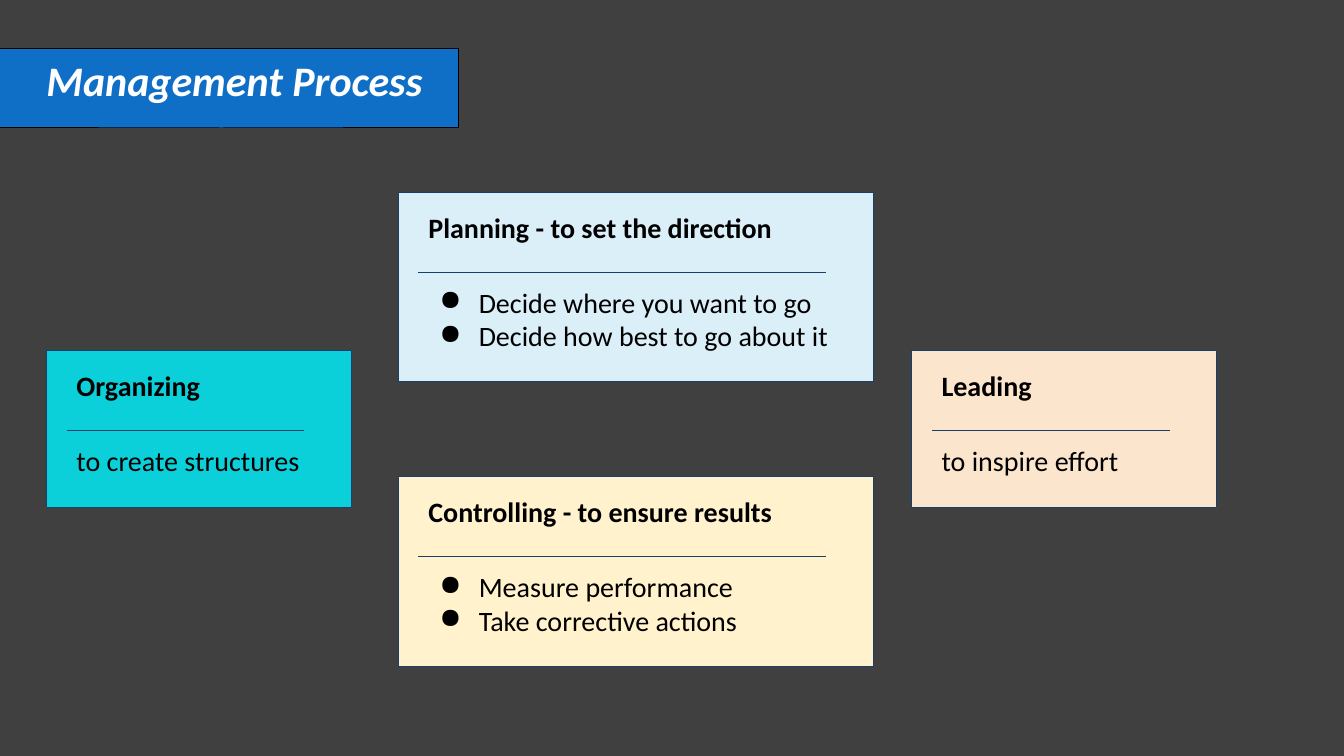
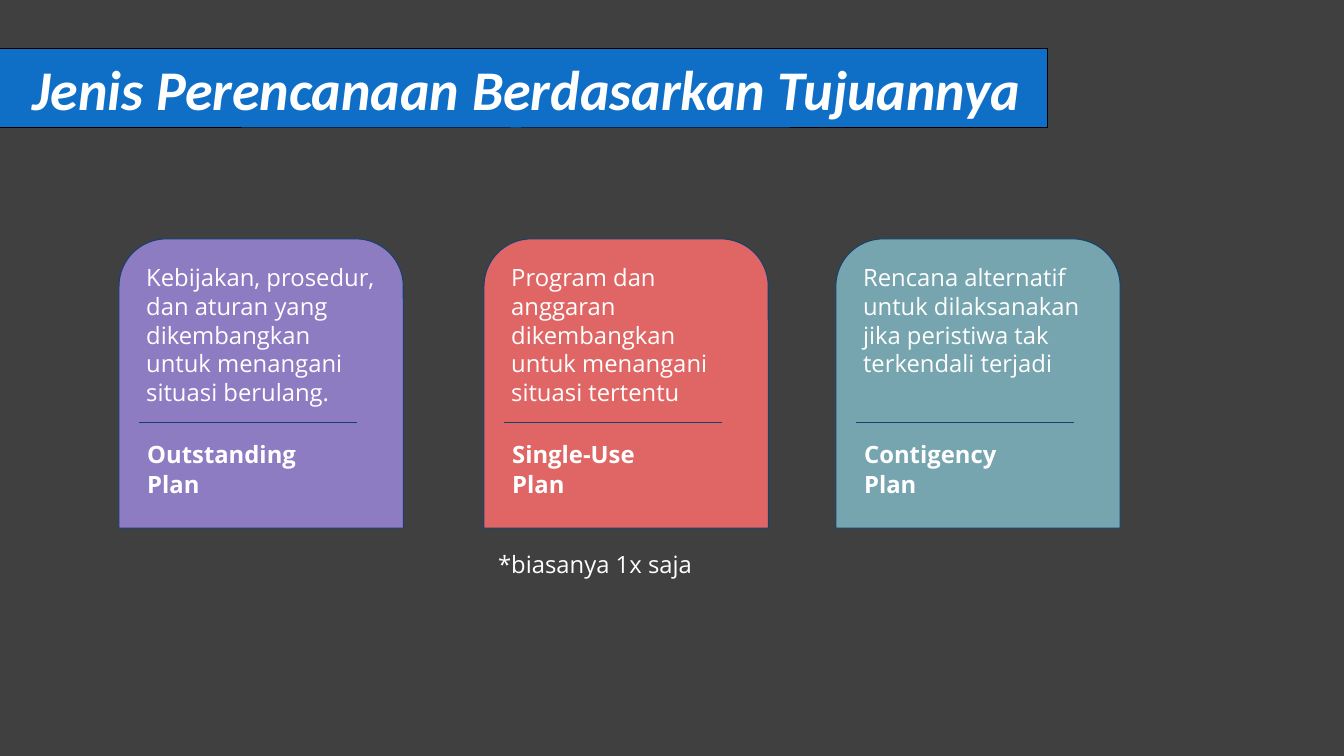
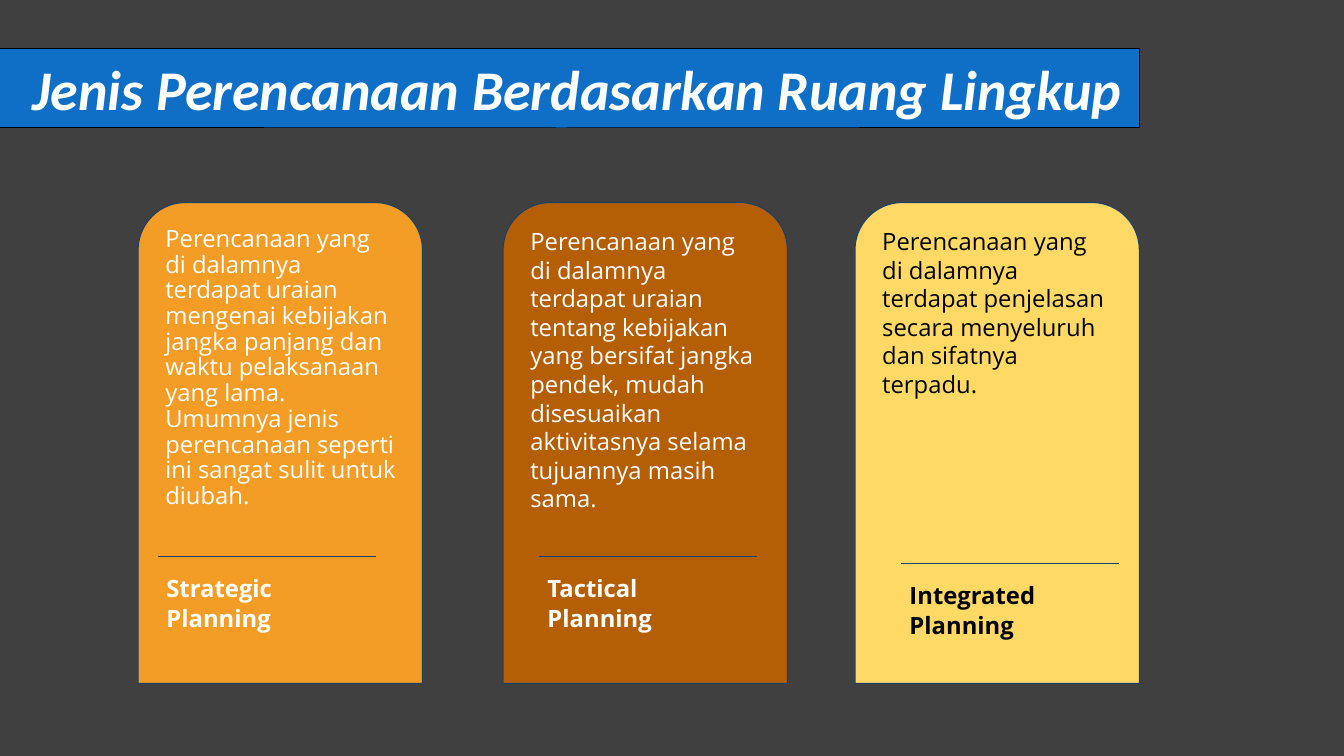
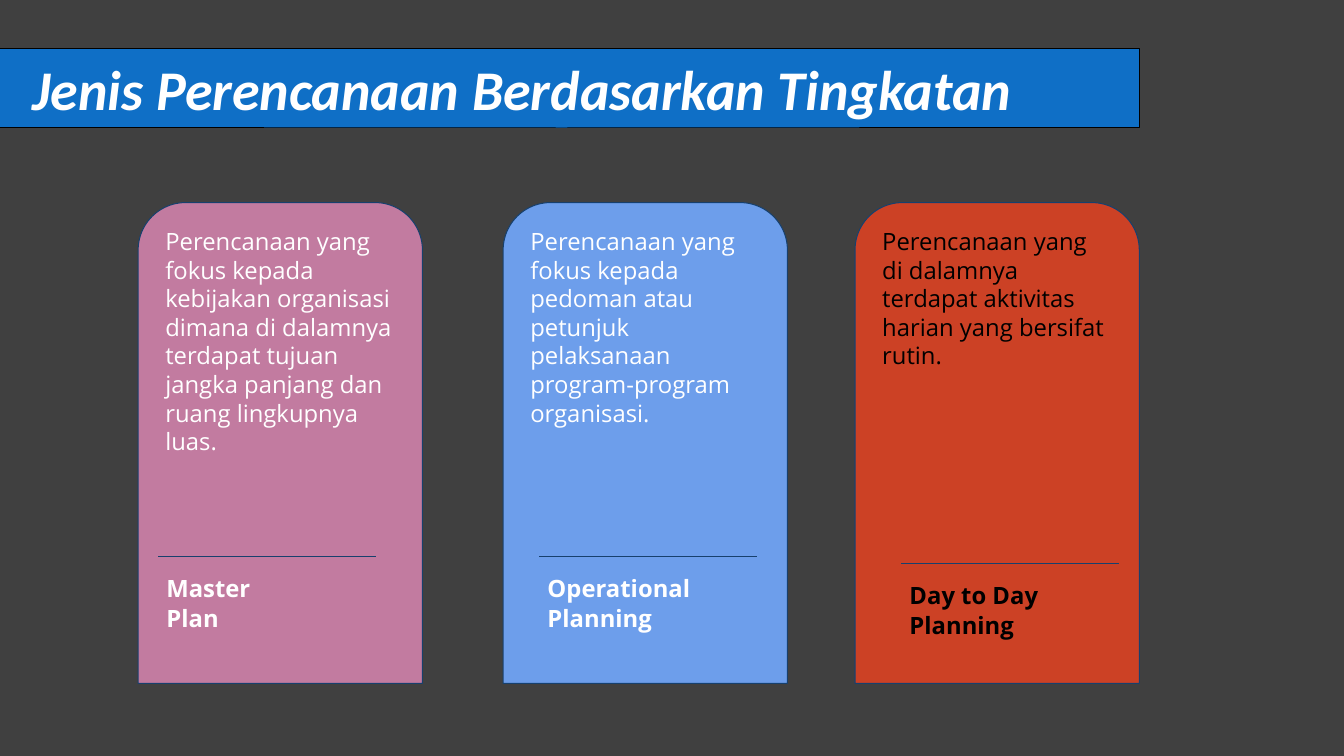
"""Build four slides on the management process and kinds of planning."""
from dataclasses import dataclass

from lxml import etree
from pptx import Presentation
from pptx.dml.color import RGBColor
from pptx.enum.shapes import MSO_CONNECTOR, MSO_SHAPE
from pptx.enum.text import MSO_ANCHOR, MSO_AUTO_SIZE, PP_ALIGN
from pptx.oxml.ns import qn
from pptx.util import Inches, Pt

RECTANGLE = MSO_SHAPE.RECTANGLE
ROUND_TOP = MSO_SHAPE.ROUND_2_SAME_RECTANGLE
STRAIGHT = MSO_CONNECTOR.STRAIGHT
TOP = MSO_ANCHOR.TOP
LEFT = PP_ALIGN.LEFT
NO_FIT = MSO_AUTO_SIZE.NONE

COLORS = {
    "background": "404040",
    "band": "0F6FC6",
    "outline": "17406D",
    "black": "000000",
    "white": "FFFFFF",
    "pale_blue": "DBEFF9",
    "cream": "FFF2CC",
    "turquoise": "0BD0D9",
    "peach": "FCE5CD",
    "purple": "8E7CC3",
    "coral": "E06666",
    "teal": "76A5AF",
    "orange": "F39C26",
    "brown": "B45F06",
    "yellow": "FFD966",
    "pink": "C27BA0",
    "blue": "6D9EEB",
    "red": "CC4125",
}

TITLE_ONLY = 5
BAND_LEFT, BAND_TOP, BAND_HEIGHT = -0.16, 0.48, 0.79
COLUMN_OFFSETS = (0, 3.62, 7.11)
PLAN_WIDTH = 2.82


@dataclass(frozen=True)
class TextStyle:
    """Font and spacing of a text box."""

    font: str
    size: float
    color: str = "black"
    bold: bool = False
    italic: bool = False
    inset_x: float = 0.13
    inset_y: float = 0.06
    line_spacing: float = 1.0
    space_before: float = 0
    bulleted: bool = False


@dataclass(frozen=True)
class ProcessCard:
    """A management function with a heading and its actions."""

    left: float
    top: float
    width: float
    height: float
    fill: str
    heading: str
    lines: tuple[str, ...]


@dataclass(frozen=True)
class PlanCard:
    """A kind of plan with its description above its name."""

    fill: str
    description: str
    name: tuple[str, ...]
    text_color: str = "white"
    rule_indent: float = 0.2
    rule_drop: float = 0
    line_spacing: float = 1.0


@dataclass(frozen=True)
class PlanSlide:
    """A title and a row of plan cards."""

    title: str
    band_width: float
    left: float
    top: float
    height: float
    description_height: float
    rule_offset: float
    cards: tuple[PlanCard, ...]


PROCESS_CARDS = (
    ProcessCard(3.95, 1.91, 4.71, 1.88, "pale_blue", "Planning - to set the direction",
                ("Decide where you want to go", "Decide how best to go about it")),
    ProcessCard(3.95, 4.73, 4.71, 1.88, "cream", "Controlling - to ensure results",
                ("Measure performance", "Take corrective actions")),
    ProcessCard(0.46, 3.48, 3.03, 1.56, "turquoise", "Organizing",
                ("to create structures",)),
    ProcessCard(9.04, 3.48, 3.03, 1.56, "peach", "Leading", ("to inspire effort",)),
)

PURPOSE_SLIDE = PlanSlide(
    "Jenis Perencanaan Berdasarkan Tujuannya", 10.55, 1.18, 2.37, 2.87, 1.68, 1.82, (
        PlanCard("purple", "Kebijakan, prosedur, dan aturan yang dikembangkan untuk "
                 "menangani situasi berulang.", ("Outstanding", "Plan")),
        PlanCard("coral", "Program dan anggaran dikembangkan untuk menangani situasi "
                 "tertentu", ("Single-Use", "Plan")),
        PlanCard("teal", "Rencana alternatif untuk dilaksanakan jika peristiwa tak "
                 "terkendali terjadi", ("Contigency", "Plan")),
    ))

SCOPE_SLIDE = PlanSlide(
    "Jenis Perencanaan Berdasarkan Ruang Lingkup", 11.46, 1.37, 2.01, 4.77, 3.19, 3.51, (
        PlanCard("orange", "Perencanaan yang di dalamnya terdapat uraian mengenai "
                 "kebijakan jangka panjang dan waktu pelaksanaan yang lama. Umumnya "
                 "jenis perencanaan seperti ini sangat sulit untuk diubah.",
                 ("Strategic", "Planning"), line_spacing=0.9),
        PlanCard("brown", "Perencanaan yang di dalamnya terdapat uraian tentang "
                 "kebijakan yang bersifat jangka pendek, mudah disesuaikan "
                 "aktivitasnya selama tujuannya masih sama.",
                 ("Tactical", "Planning"), rule_indent=0.36),
        PlanCard("yellow", "Perencanaan yang di dalamnya terdapat penjelasan secara "
                 "menyeluruh dan sifatnya terpadu.", ("Integrated", "Planning"),
                 "black", 0.46, 0.07),
    ))

LEVEL_SLIDE = PlanSlide(
    "Jenis Perencanaan Berdasarkan Tingkatan", 11.46, 1.37, 2.01, 4.77, 3.19, 3.51, (
        PlanCard("pink", "Perencanaan yang fokus kepada kebijakan organisasi dimana "
                 "di dalamnya terdapat tujuan jangka panjang dan ruang lingkupnya "
                 "luas.", ("Master", "Plan")),
        PlanCard("blue", "Perencanaan yang fokus kepada pedoman atau petunjuk "
                 "pelaksanaan program-program organisasi.",
                 ("Operational", "Planning"), rule_indent=0.36),
        PlanCard("red", "Perencanaan yang di dalamnya terdapat aktivitas harian yang "
                 "bersifat rutin.", ("Day to Day", "Planning"), "black", 0.46, 0.07),
    ))


def rgb(name: str) -> RGBColor:
    """Return a named colour."""
    return RGBColor.from_string(COLORS[name])


def add_bullet(paragraph) -> None:
    """Give a paragraph a round bullet and a hanging indent."""
    properties = paragraph._p.get_or_add_pPr()
    properties.set("marL", str(Inches(0.5)))
    properties.set("indent", str(Inches(-0.39)))
    color = etree.SubElement(properties, qn("a:buClr"))
    etree.SubElement(color, qn("a:srgbClr"), val=COLORS["black"])
    etree.SubElement(properties, qn("a:buChar"), char="●")


def write_text(shape, lines: tuple[str, ...], style: TextStyle) -> None:
    """Write paragraphs into a shape and format them."""
    frame = shape.text_frame
    frame.text = "\n".join(lines)
    frame.word_wrap = True
    frame.auto_size = NO_FIT
    frame.vertical_anchor = TOP
    frame.margin_left = frame.margin_right = Inches(style.inset_x)
    frame.margin_top = frame.margin_bottom = Inches(style.inset_y)
    for index, paragraph in enumerate(frame.paragraphs):
        paragraph.alignment = LEFT
        paragraph.line_spacing = style.line_spacing
        if index:
            paragraph.space_before = Pt(style.space_before)
        if style.bulleted:
            add_bullet(paragraph)
        for run in paragraph.runs:
            run.font.name = style.font
            run.font.size = Pt(style.size)
            run.font.bold = style.bold
            run.font.italic = style.italic
            run.font.color.rgb = rgb(style.color)


def add_text(slide, left: float, top: float, width: float, height: float,
             lines: tuple[str, ...], style: TextStyle) -> None:
    """Add a text box."""
    box = slide.shapes.add_textbox(Inches(left), Inches(top), Inches(width), Inches(height))
    write_text(box, lines, style)


def add_box(slide, kind, left: float, top: float, width: float, height: float,
            fill: str, outline: str = "outline"):
    """Add a filled shape with a thin outline."""
    shape = slide.shapes.add_shape(
        kind, Inches(left), Inches(top), Inches(width), Inches(height))
    shape.shadow.inherit = False
    shape.fill.solid()
    shape.fill.fore_color.rgb = rgb(fill)
    shape.line.color.rgb = rgb(outline)
    shape.line.width = Pt(0.75)
    return shape


def add_rule(slide, left: float, top: float, width: float) -> None:
    """Add a thin horizontal line."""
    rule = slide.shapes.add_connector(
        STRAIGHT, Inches(left), Inches(top), Inches(left + width), Inches(top))
    rule.line.color.rgb = rgb("outline")
    rule.line.width = Pt(0.75)
    etree.SubElement(rule._element.spPr, qn("a:effectLst"))


def add_titled_slide(presentation, title: str, band_width: float,
                     title_left: float = 0.19, title_width: float = 11.11, size: float = 40):
    """Add a slide with its title on a blue band."""
    slide = presentation.slides.add_slide(presentation.slide_layouts[TITLE_ONLY])
    band = add_box(slide, RECTANGLE, BAND_LEFT, BAND_TOP, band_width, BAND_HEIGHT,
                   "band", "black")
    placeholder = slide.shapes.title
    placeholder.element.addprevious(band.element)
    placeholder.left, placeholder.top = Inches(title_left), Inches(BAND_TOP)
    placeholder.width, placeholder.height = Inches(title_width), Inches(BAND_HEIGHT)
    write_text(placeholder, (title,),
               TextStyle("Calibri", size, "white", bold=True, italic=True))
    return slide


def add_process_card(slide, card: ProcessCard) -> None:
    """Draw a management function."""
    add_box(slide, RECTANGLE, card.left, card.top, card.width, card.height, card.fill)
    left, width = card.left + 0.2, card.width - 0.3
    several = len(card.lines) > 1
    heading_style = TextStyle("Calibri", 20, bold=True, inset_x=0.1, inset_y=0.1)
    line_style = TextStyle("Calibri", 20, inset_x=0.1, inset_y=0.1, bulleted=several)
    add_text(slide, left, card.top + 0.08, width, 0.54, (card.heading,), heading_style)
    add_text(slide, left, card.top + 0.82, width, 0.88 if several else 0.54,
             card.lines, line_style)
    add_rule(slide, left, card.top + 0.79, card.width - 0.67)


def add_plan_card(slide, layout: PlanSlide, card: PlanCard, left: float) -> None:
    """Draw a kind of plan."""
    box = add_box(slide, ROUND_TOP, left, layout.top, PLAN_WIDTH, layout.height, card.fill)
    box.adjustments[0] = 0.167
    rule_left = left + card.rule_indent
    rule_top = layout.top + layout.rule_offset + card.rule_drop
    add_text(slide, left + 0.14, layout.top + 0.18, 2.55, layout.description_height,
             (card.description,),
             TextStyle("Open Sans", 17, card.text_color, line_spacing=card.line_spacing))
    add_text(slide, rule_left - 0.05, rule_top + 0.14, 2.05, 0.79, card.name,
             TextStyle("Open Sans", 17, card.text_color, bold=True,
                       line_spacing=0.9, space_before=3.6))
    add_rule(slide, rule_left, rule_top, 2.16)


def add_plan_slide(presentation, layout: PlanSlide):
    """Add a slide with a row of plan cards."""
    slide = add_titled_slide(presentation, layout.title, layout.band_width)
    for offset, card in zip(COLUMN_OFFSETS, layout.cards):
        add_plan_card(slide, layout, card, layout.left + offset)
    return slide


def main() -> None:
    """Build and save the presentation."""
    presentation = Presentation()
    presentation.slide_width = Inches(13.33)
    presentation.slide_height = Inches(7.5)
    background = presentation.slide_master.background.fill
    background.solid()
    background.fore_color.rgb = rgb("background")

    process_slide = add_titled_slide(presentation, "Management Process", 4.71, 0.33, 5.4, 30)
    for card in PROCESS_CARDS:
        add_process_card(process_slide, card)

    purpose_slide = add_plan_slide(presentation, PURPOSE_SLIDE)
    add_text(purpose_slide, 4.81, 5.39, 2.55, 0.5, ("*biasanya 1x saja",),
             TextStyle("Open Sans", 17, "white"))
    add_plan_slide(presentation, SCOPE_SLIDE)
    add_plan_slide(presentation, LEVEL_SLIDE)
    presentation.save("out.pptx")


if __name__ == "__main__":
    main()
